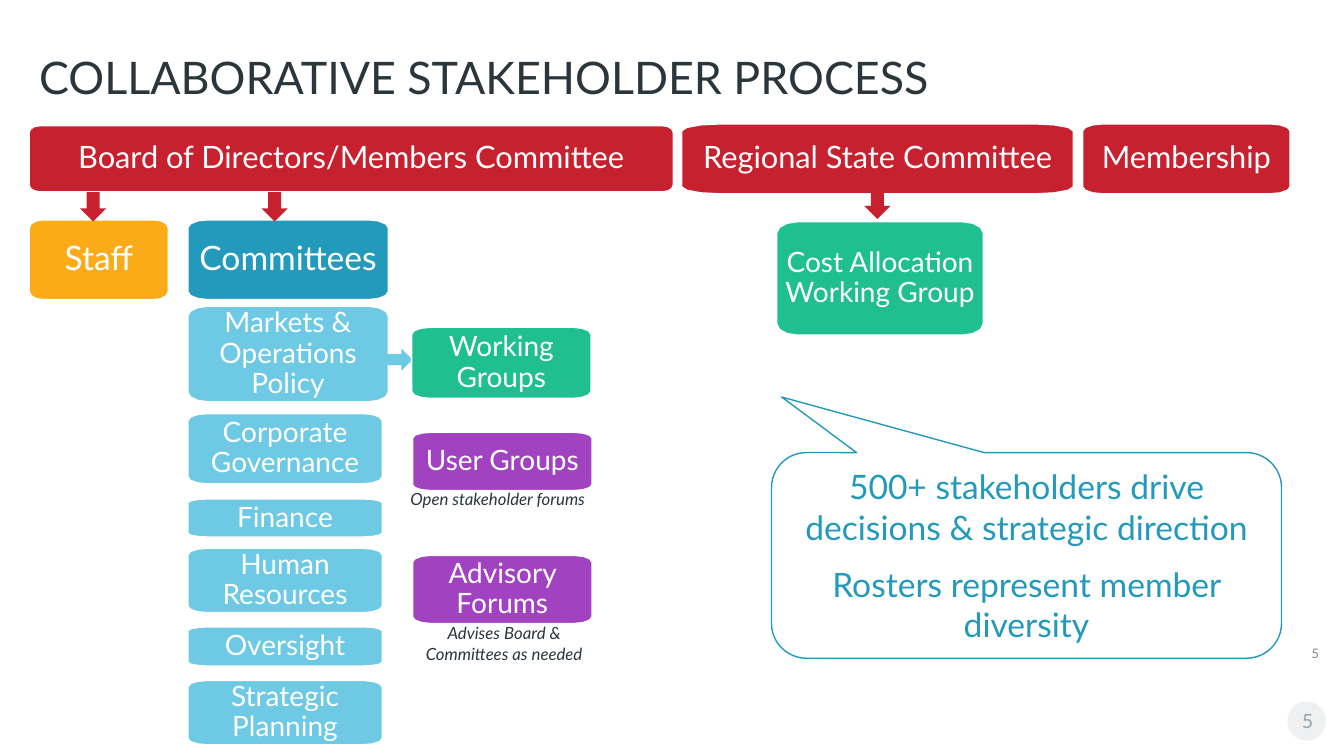
import math

import pptx
import pptx.dml.color
import pptx.enum.shapes
import pptx.enum.text
import pptx.util

Pt = pptx.util.Pt
Shape = pptx.enum.shapes.MSO_SHAPE
Align = pptx.enum.text.PP_ALIGN
Anchor = pptx.enum.text.MSO_ANCHOR

COLORS = {
    "white": "FFFFFF", "ink": "2A363B", "red": "C7202F", "amber": "FBAB18",
    "blue": "2399BB", "sky": "6DC9E4", "green": "1FBF92", "purple": "A142C0",
    "badge": "EEF0F1", "badge_number": "99A4AD", "number": "898989",
}


def color(name):
    return pptx.dml.color.RGBColor.from_string(COLORS[name])


def apply(target, values):
    for name, value in values.items():
        setattr(target, name, value)


def write(shape, paragraphs, size, ink, frame=None, para=None, font=None, inset=None):
    text_frame = shape.text_frame
    apply(text_frame, {"word_wrap": True, "vertical_anchor": Anchor.MIDDLE, **(frame or {})})
    if inset is not None:
        apply(text_frame, {f"margin_{side}": Pt(inset) for side in ("left", "right", "top", "bottom")})
    for index, wording in enumerate(paragraphs):
        paragraph = text_frame.paragraphs[0] if index == 0 else text_frame.add_paragraph()
        apply(paragraph, {"alignment": Align.CENTER, **(para or {})})
        if index:
            paragraph.space_before = Pt(12)
        run = paragraph.add_run()
        run.text = wording
        apply(run.font, {"name": "Lato", "size": Pt(size), **(font or {})})
        run.font.color.rgb = color(ink)


def label(slide, box, wording, size, ink, **formats):
    caption = slide.shapes.add_textbox(*map(Pt, box))
    write(caption, [wording], size, ink, **formats)


def paint(shape, fill, line=None):
    shape.shadow.inherit = False
    if fill:
        shape.fill.solid()
        shape.fill.fore_color.rgb = color(fill)
    else:
        shape.fill.background()
    if line:
        shape.line.color.rgb = color(line)
        shape.line.width = Pt(1)
    else:
        shape.line.fill.background()


def preset(slide, kind, box, fill, line=None):
    shape = slide.shapes.add_shape(kind, *map(Pt, box))
    paint(shape, fill, line)
    return shape


def card(slide, box, wording, fill, size=20, radius=None):
    left, top, width, height = box
    rx, ry = radius or width / 10, height / 10
    corners = [(left + rx, top + ry, 180), (left + width - rx, top + ry, 270),
               (left + width - rx, top + height - ry, 0), (left + rx, top + height - ry, 90)]
    outline = []
    for x, y, start in corners:
        for turn in (0, 30, 60, 90):
            angle = math.radians(start + turn)
            outline.append((Pt(x + rx * math.cos(angle)), Pt(y + ry * math.sin(angle))))
    builder = slide.shapes.build_freeform(*outline[0])
    builder.add_line_segments(outline[1:], close=True)
    shape = builder.convert_to_shape()
    paint(shape, fill, "white")
    write(shape, [wording], size, "white", para={"line_spacing": 0.9}, inset=5.8)


def down_arrow(slide, left, top):
    preset(slide, Shape.DOWN_ARROW, (left, top, 18.7, 20.9), "red")


def board_region(slide, left, top):
    card(slide, (left, top, 460, 47.2), "Board of Directors/Members Committee", "red", 22, 7.4)
    card(slide, (left, top + 67.2, 99.3, 57), "Staff", "amber", 24)


def board_arrows(slide, left, top):
    for offset in (0, 129.6):
        down_arrow(slide, left + offset, top)


def committees_region(slide, left, top):
    card(slide, (left, top, 143.2, 57), "Committees", "blue", 24)
    card(slide, (left, top + 61.8, 143.2, 68.2), "Markets & Operations Policy", "sky")
    for wording, offset, height in (
        ("Corporate Governance", 138.4, 50.2),
        ("Finance", 199.4, 27.2),
        ("Human Resources", 234.6, 46),
        ("Oversight", 290.8, 28),
        ("Strategic Planning", 329, 46),
    ):
        card(slide, (left, top + offset, 138.8, height), wording, "sky")
    preset(slide, Shape.RIGHT_ARROW, (left + 128.8, top + 92, 31.7, 15.8), "sky")


def groups_region(slide, left, top):
    for wording, fill, indent, offset, height in (
        ("Working Groups", "green", 0, 0, 50.8),
        ("User Groups", "purple", 0.7, 75, 41.6),
        ("Advisory Forums", "purple", 0.7, 162.9, 48.7),
    ):
        card(slide, (left + indent, top + offset, 128.2, height), wording, fill)
    note = {"frame": {"vertical_anchor": Anchor.TOP}, "font": {"italic": True}}
    label(slide, (left - 8, top + 111.8, 149.8, 21.8), "Open stakeholder forums", 12, "ink",
          para={"alignment": Align.LEFT}, **note)
    label(slide, (left - 4.4, top + 207.8, 141.1, 36), "Advises Board & Committees as needed",
          12, "ink", **note)


def state_region(slide, left, top):
    card(slide, (left, top, 279.8, 50), "Regional State Committee", "red", 22)
    card(slide, (left + 67.9, top + 69.9, 147.6, 81), "Cost Allocation Working Group", "green")
    card(slide, (left + 286.4, top, 148.3, 50), "Membership", "red", 22)
    down_arrow(slide, left + 130.5, top + 47)


def message_region(slide, box):
    callout = preset(slide, Shape.ROUNDED_RECTANGULAR_CALLOUT, box, None, "blue")
    for index, value in enumerate((-0.48, -0.77, 0.17)):
        callout.adjustments[index] = value
    write(callout, ["500+ stakeholders drive decisions & strategic direction",
                    "Rosters represent member diversity"], 24, "blue")


def page_numbers(slide, left, top):
    preset(slide, Shape.OVAL, (left, top, 27.4, 28), "badge")
    label(slide, (left, top - 2.9, 28.8, 28.8), "5", 14, "badge_number",
          frame={"vertical_anchor": Anchor.BOTTOM, "margin_left": Pt(2.2), "margin_right": Pt(2.2)})
    label(slide, (left - 186.4, top - 44.6, 216, 28.8), "5", 10.5, "number",
          frame={"vertical_anchor": Anchor.TOP}, para={"alignment": Align.RIGHT},
          font={"name": "Calibri"})


def stakeholder_slide(deck):
    slide = deck.slides.add_slide(deck.slide_layouts[6])
    page_numbers(slide, 919.6, 501.1)
    label(slide, (20.9, 39.6, 861.8, 38.2), "COLLABORATIVE STAKEHOLDER PROCESS", 32, "ink",
          para={"alignment": Align.LEFT, "line_spacing": 0.75})
    board_region(slide, 20.9, 89.8)
    committees_region(slide, 134.2, 157)
    groups_region(slide, 294, 233.8)
    state_region(slide, 486.9, 88.5)
    board_arrows(slide, 57.2, 137.3)
    message_region(slide, (551.1, 323.3, 364.3, 146.9))


def main():
    deck = pptx.Presentation()
    deck.slide_width, deck.slide_height = Pt(960), Pt(540)
    stakeholder_slide(deck)
    deck.save("out.pptx")


if __name__ == "__main__":
    main()
